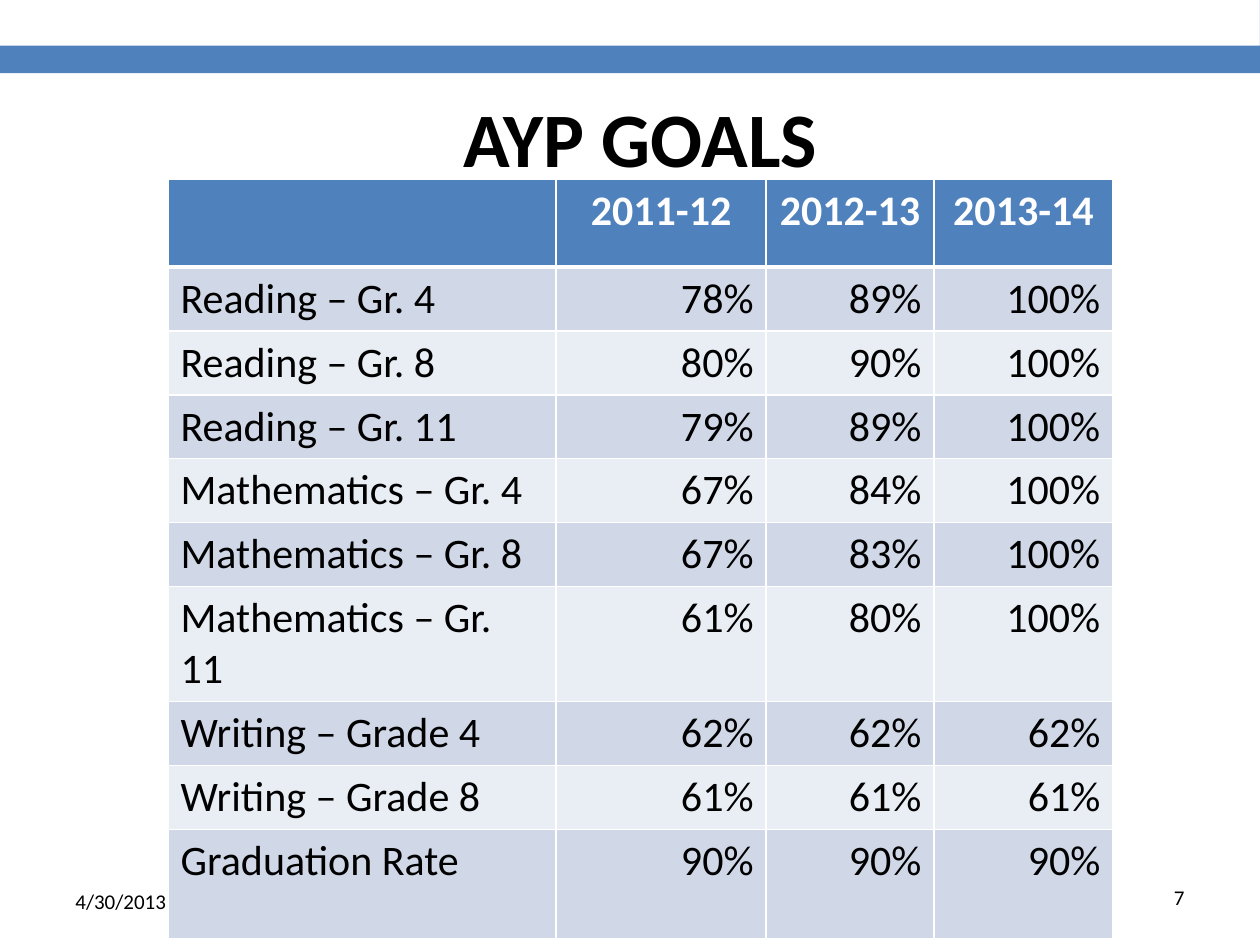
import pptx
import pptx.dml.color
import pptx.enum.shapes
import pptx.enum.text
import pptx.oxml
import pptx.oxml.ns
import pptx.util

Pt = pptx.util.Pt
ALIGN = pptx.enum.text.PP_ALIGN
ANCHOR = pptx.enum.text.MSO_ANCHOR
COLORS = {"blue": "4F81BD", "band": "D0D8E8", "pale": "E9EDF4", "white": "FFFFFF", "black": "000000"}
YEARS = ["", "2011-12", "2012-13", "2013-14"]
GOALS = [
    ("Reading – Gr. 4", 78, 89, 100),
    ("Reading – Gr. 8", 80, 90, 100),
    ("Reading – Gr. 11", 79, 89, 100),
    ("Mathematics – Gr. 4", 67, 84, 100),
    ("Mathematics – Gr. 8", 67, 83, 100),
    ("Mathematics – Gr. 11", 61, 80, 100),
    ("Writing – Grade 4", 62, 62, 62),
    ("Writing – Grade 8", 61, 61, 61),
    ("Graduation Rate", 90, 90, 90),
]
COLUMN_WIDTHS = [221.8, 120, 96, 102.2]
ROW_HEIGHTS = [50.4] + [34.6] * 8 + [62.6]


def rgb(name):
    """Return the named colour as an RGBColor."""
    return pptx.dml.color.RGBColor.from_string(COLORS[name])


def write(frame, text, size=24, color="black", bold=False, align=ALIGN.LEFT):
    """Put one formatted paragraph into a text frame."""
    paragraph = frame.paragraphs[0]
    paragraph.alignment = align
    run = paragraph.add_run()
    run.text = text
    run.font.name = "Calibri"
    run.font.size = Pt(size)
    run.font.bold = bold
    run.font.color.rgb = rgb(color)


def add_top_band(slide):
    """Draw the blue band across the head of the slide."""
    band = slide.shapes.add_shape(
        pptx.enum.shapes.MSO_SHAPE.CORNER, Pt(0), Pt(-0.7), Pt(720), Pt(42.5))
    band.adjustments[0] = 0.37
    band.adjustments[1] = 0
    band._element.spPr.find(pptx.oxml.ns.qn("a:xfrm")).set("flipH", "1")
    band.shadow.inherit = False
    band.fill.solid()
    band.fill.fore_color.rgb = rgb("blue")
    band.line.fill.background()


def set_borders(cell, bottom):
    """Give a cell white borders, with its own bottom width in points."""
    properties = cell._tc.get_or_add_tcPr()
    widths = {"lnL": 1, "lnR": 1, "lnT": 1, "lnB": bottom}
    for position, (side, width) in enumerate(widths.items()):
        properties.insert(position, pptx.oxml.parse_xml(
            f'<a:{side} {pptx.oxml.ns.nsdecls("a")} w="{Pt(width)}"><a:solidFill>'
            f'<a:srgbClr val="{COLORS["white"]}"/></a:solidFill></a:{side}>'))


def fill_cell(cell, text, fill, bottom=1, **text_format):
    """Set the fill, borders and text of a table cell."""
    cell.fill.solid()
    cell.fill.fore_color.rgb = rgb(fill)
    set_borders(cell, bottom)
    if text:
        write(cell.text_frame, text, **text_format)


def add_goals_table(slide):
    """Add the table of yearly goals."""
    holder = slide.shapes.add_table(
        len(ROW_HEIGHTS), len(COLUMN_WIDTHS), Pt(96), Pt(102.2), Pt(540), Pt(403.2))
    goals = holder.table
    for column, width in zip(goals.columns, COLUMN_WIDTHS):
        column.width = Pt(width)
    for row, height in zip(goals.rows, ROW_HEIGHTS):
        row.height = Pt(height)
    holder.height = Pt(403.2)
    for column, year in enumerate(YEARS):
        fill_cell(goals.cell(0, column), year, "blue", bottom=3,
                  color="white", bold=True, align=ALIGN.CENTER)
    for row, (subject, *rates) in enumerate(GOALS, start=1):
        fill = "band" if row % 2 else "pale"
        fill_cell(goals.cell(row, 0), subject, fill)
        for column, rate in enumerate(rates, start=1):
            fill_cell(goals.cell(row, column), f"{rate}%", fill, align=ALIGN.RIGHT)


def add_footer(slide, text, left, top, align):
    """Add a small text at the foot of the slide."""
    footer = slide.shapes.add_textbox(Pt(left), Pt(top), Pt(168), Pt(28.8))
    footer.text_frame.word_wrap = True
    footer.text_frame.vertical_anchor = ANCHOR.MIDDLE
    write(footer.text_frame, text, size=12, align=align)


def set_title(slide, text):
    """Place the title in front of the table and write it."""
    title = slide.shapes.title
    title.left, title.top, title.width, title.height = Pt(156), Pt(48), Pt(420), Pt(60.6)
    title.text_frame.vertical_anchor = ANCHOR.TOP
    title.text_frame.auto_size = pptx.enum.text.MSO_AUTO_SIZE.SHAPE_TO_FIT_TEXT
    write(title.text_frame, text, size=44, bold=True, align=ALIGN.CENTER)
    title._element.getparent().append(title._element)


def main():
    """Build the slide and save it."""
    deck = pptx.Presentation()
    deck.slide_width, deck.slide_height = Pt(720), Pt(540)
    slide = deck.slides.add_slide(deck.slide_layouts[5])
    add_top_band(slide)
    add_goals_table(slide)
    add_footer(slide, "4/30/2013", 36, 500.4, ALIGN.LEFT)
    add_footer(slide, "7", 516, 498.2, ALIGN.RIGHT)
    set_title(slide, "AYP GOALS")
    deck.save("out.pptx")


if __name__ == "__main__":
    main()
